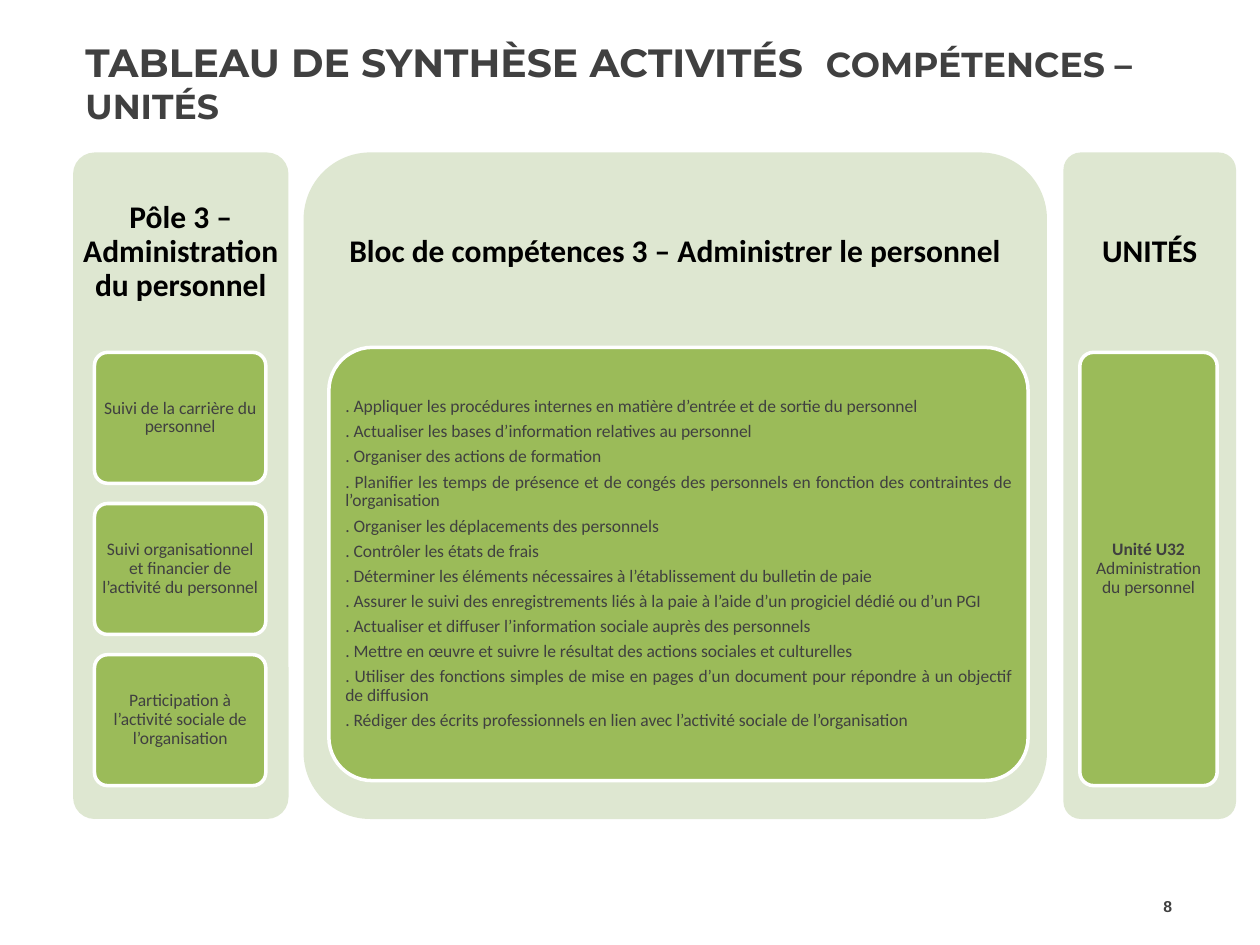
from pptx import Presentation
from pptx.dml.color import RGBColor as RGB
from pptx.enum.shapes import MSO_SHAPE as SHAPE
from pptx.enum.text import MSO_ANCHOR as ANCHOR, PP_ALIGN as AL
from pptx.util import Inches as I, Pt

C = {"panel": "DEE7D1", "card": "9BBB59", "white": "FFFFFF", "text": "404040", "head": "000000"}

prs = Presentation()
prs.slide_width, prs.slide_height = I(10), I(7.5)
s = prs.slides.add_slide(prs.slide_layouts[6])


def rounded(x, y, w, h, fill):
    sp = s.shapes.add_shape(SHAPE.ROUNDED_RECTANGLE, I(x), I(y), I(w), I(h))
    sp.adjustments[0] = 0.1
    sp.shadow.inherit = False
    sp.fill.solid()
    sp.fill.fore_color.rgb = RGB.from_string(C[fill])
    sp.line.fill.background()
    return sp


def write(sp, paragraphs, size, color="text", font="Calibri", align=AL.CENTER, inset=(0.03, 0.02), tight=True):
    """Each paragraph is a list of (text, bold) runs."""
    tf = sp.text_frame
    tf.word_wrap = True
    tf.vertical_anchor = ANCHOR.MIDDLE
    tf.margin_left = tf.margin_right = I(inset[0])
    tf.margin_top = tf.margin_bottom = I(inset[1])
    for i, runs in enumerate(paragraphs):
        p = tf.add_paragraph() if i else tf.paragraphs[0]
        p.alignment = align
        if tight:
            p.line_spacing = 0.9
            p.space_after = Pt(0.35 * size)
        for text, bold in runs:
            r = p.add_run()
            r.text = text
            r.font.size, r.font.bold, r.font.name = Pt(size), bold, font
            r.font.color.rgb = RGB.from_string(C[color])


# Grid: three panels, heading in the top 30 %, cards in the next 65 %
top, height, gap = 1.21, 5.29, 0.16
head_h, body_h = 0.3 * height, 0.65 * height
body_y = top + head_h

skills = [
    ". Appliquer les procédures internes en matière d’entrée et de sortie du personnel",
    ". Actualiser les bases d’information relatives au personnel",
    ". Organiser des actions de formation",
    ". Planifier les temps de présence et de congés des personnels en fonction des contraintes de l’organisation",
    ". Organiser les déplacements des personnels",
    ". Contrôler les états de frais",
    ". Déterminer les éléments nécessaires à l’établissement du bulletin de paie",
    ". Assurer le suivi des enregistrements liés à la paie à l’aide d’un progiciel dédié ou d’un PGI",
    ". Actualiser et diffuser l’information sociale auprès des personnels",
    ". Mettre en œuvre et suivre le résultat des actions sociales et culturelles",
    ". Utiliser des fonctions simples de mise en pages d’un document pour répondre à un objectif de diffusion",
    ". Rédiger des écrits professionnels en lien avec l’activité sociale de l’organisation",
]
activities = [
    "Suivi de la carrière du personnel",
    "Suivi organisationnel et financier de l’activité du personnel",
    "Participation à l’activité sociale de l’organisation",
]
unit = [("Unité U32 ", True), ("Administration du personnel", False)]

# Panel left and width, card left and width, card offset, alignment, heading, cards
columns = [
    (0.58, 1.71, 0.75, 1.36, 0, AL.CENTER, "Pôle 3 – Administration du personnel",
     [[[(a, False)]] for a in activities]),
    (2.41, 5.9, 2.61, 5.55, -0.04, AL.JUSTIFY, "Bloc de compétences 3 – Administrer le personnel",
     [[[(t, False)] for t in skills]]),
    (8.44, 1.37, 8.57, 1.09, 0, AL.CENTER, "UNITÉS", [[unit]]),
]

# Title
title = s.shapes.add_textbox(I(0.58), I(0.44), I(8.92), I(0.77))
write(title, [[("TABLEAU DE SYNTHÈSE ACTIVITÉS  ", True), ("COMPÉTENCES – UNITÉS", True)]],
      22.5, font="Montserrat", align=AL.LEFT, inset=(0.1, 0.05), tight=False)
title.text_frame.paragraphs[0].runs[1].font.size = Pt(19.8)
title.text_frame.margin_bottom = I(0.39)

# Panels with headings and cards
for x, w, card_x, card_w, shift, align, heading, cards in columns:
    rounded(x, top, w, height, "panel")
    head = s.shapes.add_textbox(I(x), I(top), I(w), I(head_h))
    write(head, [[(heading, True)]], 18, "head", inset=(0.07, 0.07))
    card_h = (body_h - gap * (len(cards) - 1)) / len(cards)
    for i, paragraphs in enumerate(cards):
        card = rounded(card_x, body_y + shift + i * (card_h + gap), card_w, card_h, "card")
        card.line.color.rgb = RGB.from_string(C["white"])
        card.line.width = Pt(2)
        write(card, paragraphs, 10, align=align)

# Page number
number = s.shapes.add_textbox(I(8.91), I(6.99), I(0.49), I(0.4))
write(number, [[("8", True)]], 9, font="Arial", align=AL.RIGHT, inset=(0.1, 0.05), tight=False)

prs.save("out.pptx")
